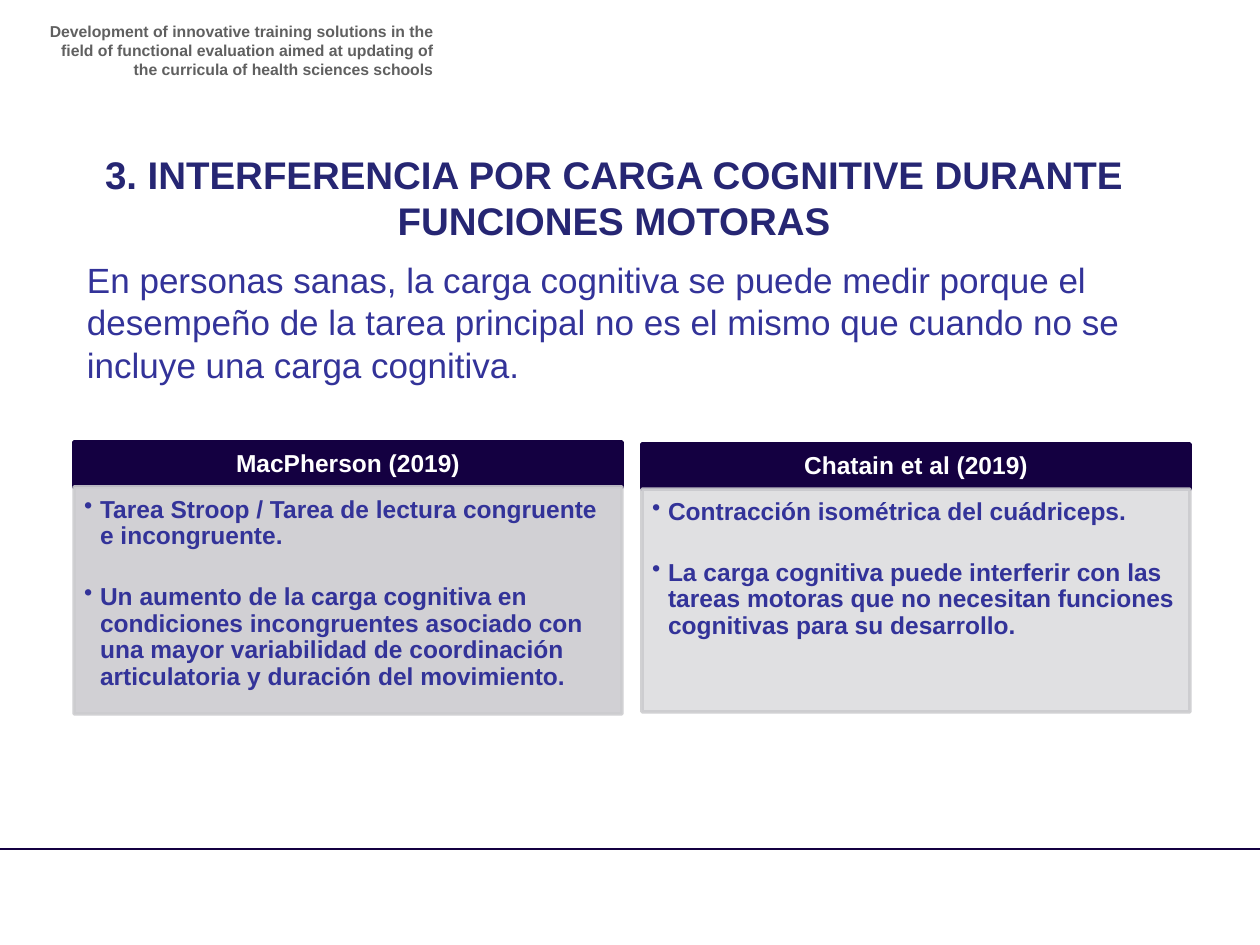
from lxml import etree
from pptx import Presentation
from pptx.dml.color import RGBColor
from pptx.enum.shapes import MSO_CONNECTOR, MSO_SHAPE
from pptx.enum.text import MSO_ANCHOR, PP_ALIGN
from pptx.oxml.ns import qn
from pptx.util import Emu, Pt

LEFT, CENTER, RIGHT = PP_ALIGN.LEFT, PP_ALIGN.CENTER, PP_ALIGN.RIGHT
TOP, MIDDLE = MSO_ANCHOR.TOP, MSO_ANCHOR.MIDDLE
RECT, STRAIGHT = MSO_SHAPE.RECTANGLE, MSO_CONNECTOR.STRAIGHT
SCALE = 914400 / 126
NAVY, INDIGO, TITLE, GREY, WHITE = "140041", "333399", "262673", "606060", "FFFFFF"


def px(n):
    return Emu(round(n * SCALE))


def rgb(value):
    return RGBColor.from_string(value)


def set_alpha(fill_format, percent):
    color = fill_format._xPr.find(qn("a:solidFill"))[0]
    etree.SubElement(color, qn("a:alpha")).set("val", str(percent * 1000))


def add_bullet(p, indent):
    pPr = p._p.get_or_add_pPr()
    pPr.set("marL", str(px(indent)))
    pPr.set("indent", str(-px(indent)))
    etree.SubElement(pPr, qn("a:buChar")).set("char", "•")


def write(tf, paragraphs, size=14, color=INDIGO, bold=True, align=LEFT, anchor=TOP,
          insets=(13, 6, 13, 6), spacing=None, gap=0, indent=0):
    tf.word_wrap = True
    tf.vertical_anchor = anchor
    tf.margin_left, tf.margin_top, tf.margin_right, tf.margin_bottom = map(px, insets)
    for i, text in enumerate(paragraphs):
        p = tf.paragraphs[0] if i == 0 else tf.add_paragraph()
        if indent:
            add_bullet(p, indent)
        p.alignment = align
        if spacing:
            p.line_spacing = spacing
        if i:
            p.space_before = Pt(gap)
        r = p.add_run()
        r.text = text
        r.font.name = "Arial"
        r.font.size = Pt(size)
        r.font.bold = bold
        r.font.color.rgb = rgb(color)


class Deck:
    def __init__(self, width, height):
        self.prs = Presentation()
        self.prs.slide_width, self.prs.slide_height = px(width), px(height)
        self.s = self.prs.slides.add_slide(self.prs.slide_layouts[6])

    def text(self, box, text, **fmt):
        sp = self.s.shapes.add_textbox(*map(px, box))
        write(sp.text_frame, [text], **fmt)

    def rect(self, box, paragraphs, fill, line, fill_alpha=100, line_alpha=100, **fmt):
        sp = self.s.shapes.add_shape(RECT, *map(px, box))
        sp.shadow.inherit = False
        sp.fill.solid()
        sp.fill.fore_color.rgb = rgb(fill)
        sp.line.color.rgb = rgb(line)
        sp.line.width = Pt(2)
        if fill_alpha < 100:
            set_alpha(sp.fill, fill_alpha)
        if line_alpha < 100:
            set_alpha(sp.line.fill, line_alpha)
        write(sp.text_frame, paragraphs, **fmt)

    def card(self, x, y, height, heading, points, fill, fill_alpha=100):
        width, head = 548, 45
        self.rect((x, y, width, head), [heading], NAVY, NAVY, color=WHITE,
                  align=CENTER, anchor=MIDDLE, insets=(14, 8, 14, 8), spacing=0.9)
        self.rect((x, y + head, width, height), points, fill, "CCCCCF", fill_alpha, 90,
                  insets=(10, 10, 14, 15), spacing=0.9, gap=19.7, indent=16)

    def line(self, x1, y1, x2, y2, color, width):
        c = self.s.shapes.add_connector(STRAIGHT, *map(px, (x1, y1, x2, y2)))
        c.line.color.rgb = rgb(color)
        c.line.width = Pt(width)
        etree.SubElement(c._element.spPr, qn("a:effectLst"))


def main():
    deck = Deck(1260, 945)
    deck.line(0, 849, 1260, 849, NAVY, 1)
    deck.text((35, 16, 411, 59),
              "Development of innovative training solutions in the ﬁeld of functional "
              "evaluation aimed at updating of the curricula of health sciences schools",
              size=9, color=GREY, align=RIGHT)
    deck.text((74, 253, 1137, 140),
              "En personas sanas, la carga cognitiva se puede medir porque el desempeño de la "
              "tarea principal no es el mismo que cuando no se incluye una carga cognitiva.",
              size=20, bold=False)
    deck.card(74, 442, 227, "MacPherson (2019)",
              ["Tarea Stroop / Tarea de lectura congruente e incongruente.",
               "Un aumento de la carga cognitiva en condiciones incongruentes asociado con una "
               "mayor variabilidad de coordinación articulatoria y duración del movimiento."],
              "D1D0D4")
    deck.card(642, 444, 223, "Chatain et al (2019)",
              ["Contracción isométrica del cuádriceps.",
               "La carga cognitiva puede interferir con las tareas motoras que no necesitan "
               "funciones cognitivas para su desarrollo."],
              "DDDDDF", 90)
    deck.text((-16, 145, 1260, 106),
              "3. INTERFERENCIA POR CARGA COGNITIVE DURANTE FUNCIONES MOTORAS",
              size=22, color=TITLE, align=CENTER)
    deck.prs.save("out.pptx")


if __name__ == "__main__":
    main()
